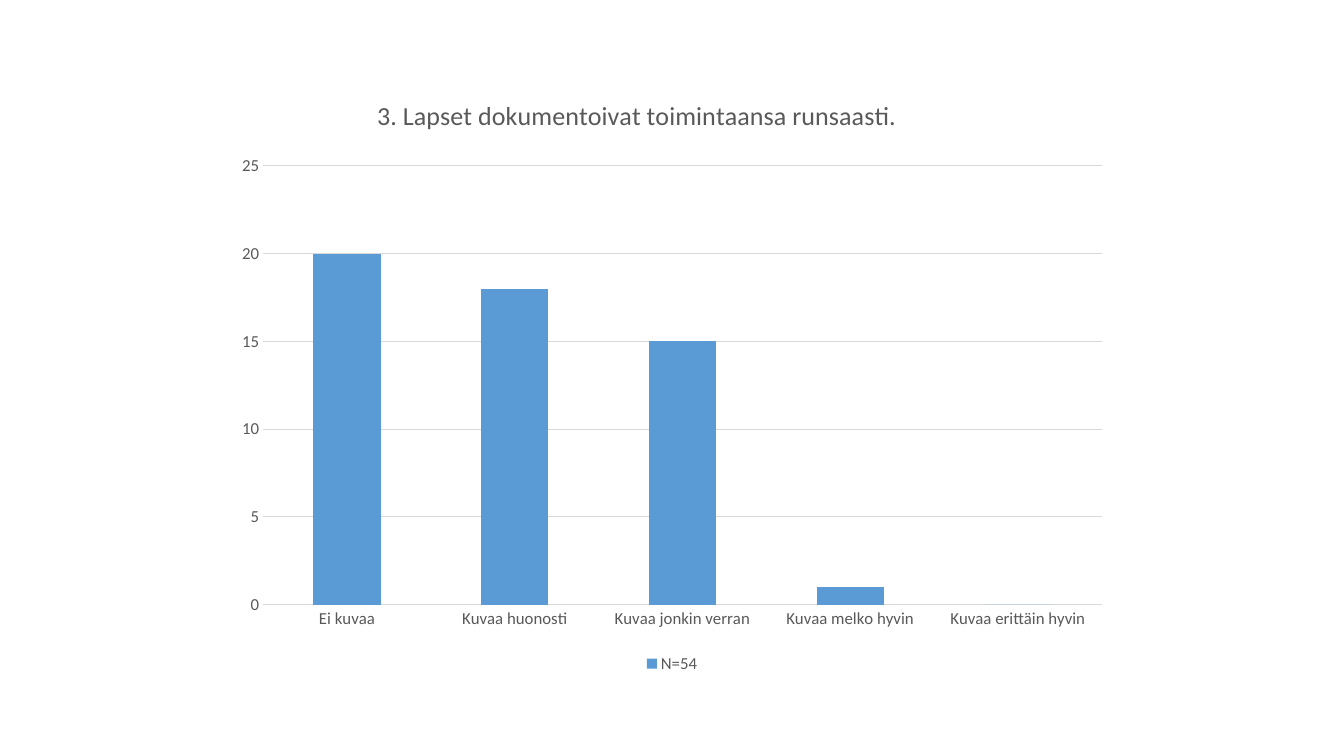
from lxml.etree import SubElement
from pptx import Presentation
from pptx.chart.data import CategoryChartData
from pptx.dml.color import RGBColor
from pptx.enum.chart import XL_CHART_TYPE, XL_LEGEND_POSITION, XL_TICK_MARK
from pptx.oxml.ns import qn
from pptx.util import Pt

TEXT_GREY = RGBColor(0x59, 0x59, 0x59)
LINE_GREY = RGBColor(0xD9, 0xD9, 0xD9)
BAR_BLUE = RGBColor(0x5B, 0x9B, 0xD5)

ANSWERS = {
    "Ei kuvaa": 20,
    "Kuvaa huonosti": 18,
    "Kuvaa jonkin verran": 15,
    "Kuvaa melko hyvin": 1,
    "Kuvaa erittäin hyvin": 0,
}


class SurveySlide:
    """Holds the style and the current slide, and adds its chart parts."""

    font_name = "Calibri"
    label_size = 12
    title_size = 18.6
    line_width = 0.75

    def __init__(self, presentation):
        """Add a blank slide to the presentation."""
        self.slide = presentation.slides.add_slide(presentation.slide_layouts[6])

    def style_font(self, font, size):
        """Apply the shared typeface and colour at the given size."""
        font.name = self.font_name
        font.size = Pt(size)
        font.bold = False
        font.color.rgb = TEXT_GREY

    def style_line(self, line):
        """Apply the thin grey line."""
        line.color.rgb = LINE_GREY
        line.width = Pt(self.line_width)

    def add_column_chart(self, left, top, width, height, series_name, answers):
        """Add a stacked column chart of the answers."""
        self.chart_size = (width, height)
        data = CategoryChartData()
        data.categories = list(answers)
        data.add_series(series_name, list(answers.values()))
        frame = self.slide.shapes.add_chart(
            XL_CHART_TYPE.COLUMN_STACKED,
            Pt(left), Pt(top), Pt(width), Pt(height), data,
        )
        self.chart = frame.chart
        self.style_font(self.chart.font, self.label_size)
        plot = self.chart.plots[0]
        plot.vary_by_categories = False
        plot.gap_width = 150
        plot.overlap = 100
        fill = plot.series[0].format.fill
        fill.solid()
        fill.fore_color.rgb = BAR_BLUE

    def place_part(self, tag, **lengths):
        """Fix a chart part at lengths in points from the chart's corner."""
        part = self.chart.element.find(".//" + qn(tag))
        layout = part.find(qn("c:layout"))
        if layout is None:
            layout = SubElement(part, qn("c:layout"))
            part.insert(1 if tag == "c:title" else 0, layout)
        manual = SubElement(layout, qn("c:manualLayout"))
        if tag == "c:plotArea":
            SubElement(manual, qn("c:layoutTarget")).set("val", "inner")
        for name in ("x", "y"):
            SubElement(manual, qn(f"c:{name}Mode")).set("val", "edge")
        width, height = self.chart_size
        for name, length in lengths.items():
            whole = width if name in ("x", "w") else height
            SubElement(manual, qn(f"c:{name}")).set("val", str(length / whole))

    def add_title(self, text, x, y):
        """Add the chart title at the given offset."""
        self.chart.has_title = True
        title = self.chart.chart_title
        title.include_in_layout = False
        title.text_frame.text = text
        for run in title.text_frame.paragraphs[0].runs:
            self.style_font(run.font, self.title_size)
        self.place_part("c:title", x=x, y=y)

    def add_axes(self, maximum, step):
        """Format both axes and the horizontal gridlines."""
        category_axis, value_axis = self.chart.category_axis, self.chart.value_axis
        for axis in (category_axis, value_axis):
            axis.major_tick_mark = XL_TICK_MARK.NONE
            axis.minor_tick_mark = XL_TICK_MARK.NONE
            self.style_font(axis.tick_labels.font, self.label_size)
        self.style_line(category_axis.format.line)
        value_axis.format.line.fill.background()
        value_axis.minimum_scale = 0
        value_axis.maximum_scale = maximum
        value_axis.major_unit = step
        value_axis.has_major_gridlines = True
        self.style_line(value_axis.major_gridlines.format.line)

    def add_legend(self):
        """Add the legend below the columns."""
        self.chart.has_legend = True
        legend = self.chart.legend
        legend.position = XL_LEGEND_POSITION.BOTTOM
        legend.include_in_layout = False
        self.style_font(legend.font, self.label_size)


def main():
    """Build and save the presentation."""
    presentation = Presentation()
    presentation.slide_width = Pt(960)
    presentation.slide_height = Pt(540)
    survey = SurveySlide(presentation)
    survey.add_column_chart(160, 57, 640, 427, "N=54", ANSWERS)
    survey.add_title("3. Lapset dokumentoivat toimintaansa runsaasti.", x=106, y=9)
    survey.add_axes(maximum=25, step=5)
    survey.add_legend()
    survey.place_part("c:plotArea", x=28, y=61.5, w=599, h=313.5)
    presentation.save("out.pptx")


if __name__ == "__main__":
    main()
